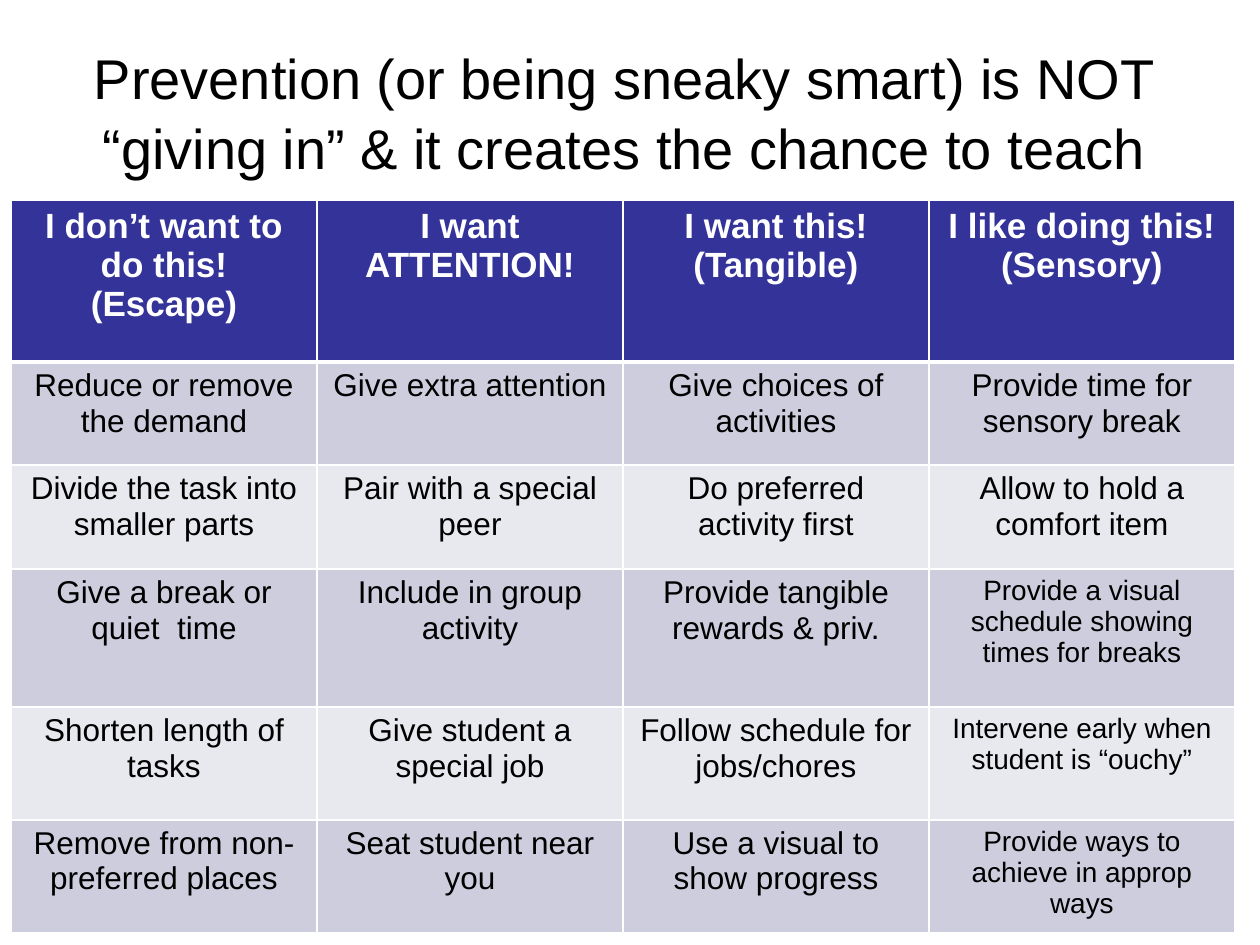
"""Build a slide with a table of prevention strategies for four behaviour functions."""
from dataclasses import dataclass

from lxml import etree
from pptx import Presentation
from pptx import util as u
from pptx.dml.color import RGBColor
from pptx.enum import text
from pptx.oxml import ns

PX = 914400 // 126


@dataclass(frozen=True)
class Theme:
    font: str = "Arial"
    ink: str = "000000"
    white: str = "FFFFFF"
    header_fill: str = "333399"
    bands: tuple = ("CDCDDE", "E8E8EF")
    title_size: int = 32
    header_size: int = 20
    body_size: int = 18
    small_size: int = 16
    thin: int = 1
    thick: int = 3


theme = Theme()


def style_text(frame, size, color, bold=False):
    for para in frame.paragraphs:
        para.alignment = text.PP_ALIGN.CENTER
        for span in para.runs:
            span.font.name = theme.font
            span.font.size = u.Pt(size)
            span.font.bold = bold
            span.font.color.rgb = RGBColor.from_string(color)


def add_borders(cell, top, bottom):
    properties = cell._tc.get_or_add_tcPr()
    widths = {"lnL": theme.thin, "lnR": theme.thin, "lnT": top, "lnB": bottom}
    for position, (side, width) in enumerate(widths.items()):
        line = etree.Element(ns.qn(f"a:{side}"), w=str(u.Pt(width)))
        fill = etree.SubElement(line, ns.qn("a:solidFill"))
        etree.SubElement(fill, ns.qn("a:srgbClr"), val=theme.white)
        properties.insert(position, line)


deck = Presentation()
deck.slide_width = 1260 * PX
deck.slide_height = 945 * PX
page = deck.slides.add_slide(deck.slide_layouts[5])

title = page.shapes.title
title.left, title.top, title.width, title.height = (
    length * PX for length in (42, 21, 1165, 179)
)
title.text_frame.text = (
    "Prevention (or being sneaky smart) is NOT “giving in” "
    "& it creates the chance to teach"
)
title.text_frame.auto_size = text.MSO_AUTO_SIZE.NONE
title.text_frame.vertical_anchor = text.MSO_ANCHOR.MIDDLE
title.text_frame.paragraphs[0].line_spacing = 1.04
style_text(title.text_frame, theme.title_size, theme.ink)

strategies = [
    ["I don’t want to do this!\n(Escape)", "I want ATTENTION!",
     "I want this!\n(Tangible)", "I like doing this!\n(Sensory)"],
    ["Reduce or remove the demand", "Give extra attention",
     "Give choices of activities", "Provide time for sensory break"],
    ["Divide the task into smaller parts", "Pair with a special peer",
     "Do preferred activity first", "Allow to hold a comfort item"],
    ["Give a break or quiet  time", "Include in group activity",
     "Provide tangible rewards & priv.",
     "Provide a visual schedule showing times for breaks"],
    ["Shorten length of tasks", "Give student a special job",
     "Follow schedule for jobs/chores", "Intervene early when student is “ouchy”"],
    ["Remove from non-preferred places", "Seat student near you",
     "Use a visual to show progress", "Provide ways to achieve in approp ways"],
]
row_heights = [162, 103, 104, 138, 113, 113]
column_width = 306
column_count = len(strategies[0])

table = page.shapes.add_table(
    len(strategies), column_count, 11 * PX, 200 * PX,
    column_count * column_width * PX, sum(row_heights) * PX,
).table
for column in table.columns:
    column.width = column_width * PX

for row, entries in enumerate(strategies):
    table.rows[row].height = row_heights[row] * PX
    is_header = row == 0
    row_fill = theme.header_fill if is_header else theme.bands[(row - 1) % 2]
    top = theme.thick if row == 1 else theme.thin
    bottom = theme.thick if is_header else theme.thin
    for column, entry in enumerate(entries):
        cell = table.cell(row, column)
        cell.text_frame.text = entry
        cell.fill.solid()
        cell.fill.fore_color.rgb = RGBColor.from_string(row_fill)
        add_borders(cell, top, bottom)
        if is_header:
            style_text(cell.text_frame, theme.header_size, theme.white, True)
        else:
            is_small = row >= 3 and column == column_count - 1
            size = theme.small_size if is_small else theme.body_size
            style_text(cell.text_frame, size, theme.ink)

deck.save("out.pptx")
